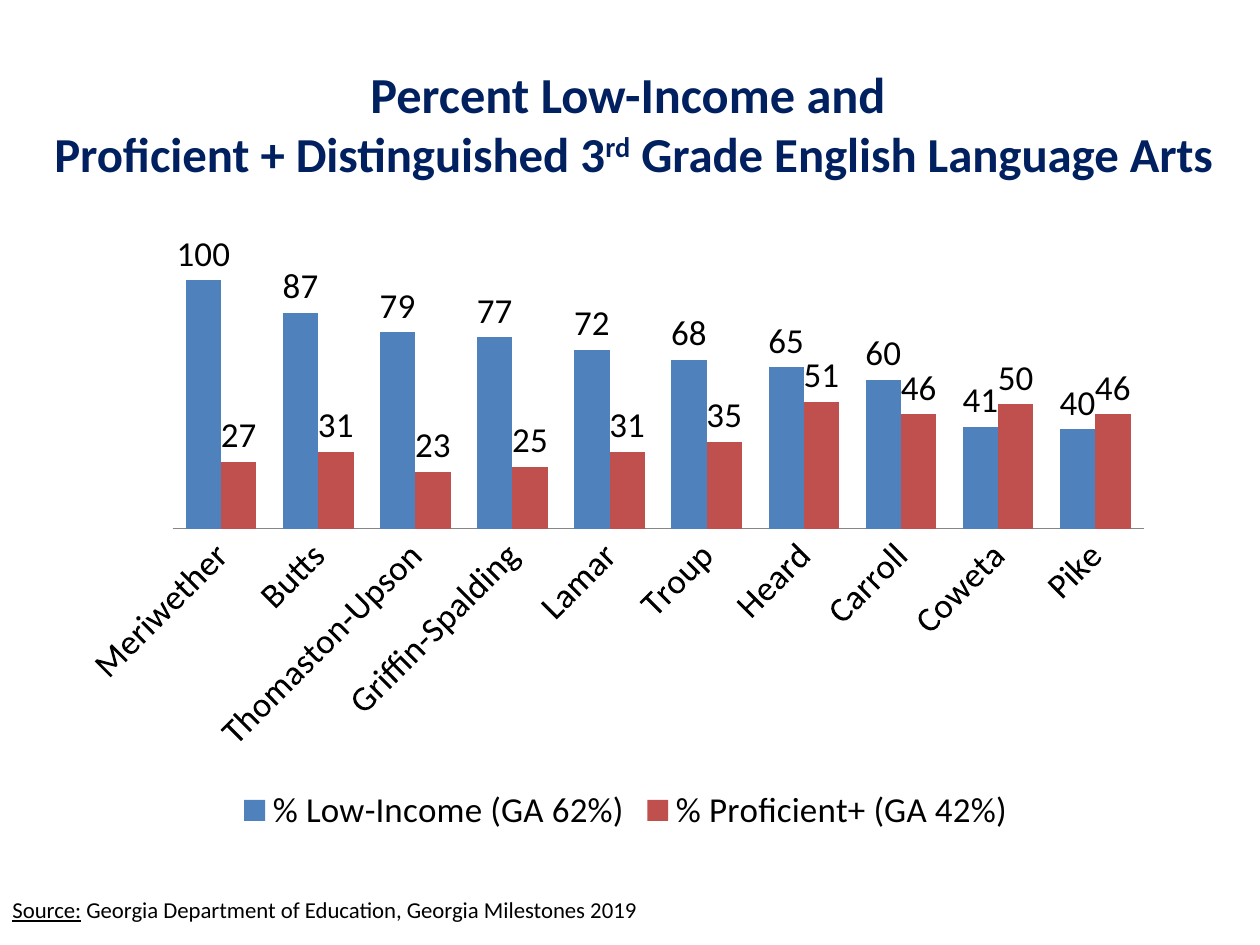
from lxml import etree
from pptx import Presentation
from pptx.chart.data import CategoryChartData
from pptx.dml.color import RGBColor
from pptx.enum.chart import XL_CHART_TYPE, XL_LABEL_POSITION, XL_LEGEND_POSITION, XL_TICK_MARK
from pptx.enum.text import MSO_ANCHOR, MSO_AUTO_SIZE, PP_ALIGN
from pptx.oxml.ns import qn
from pptx.util import Inches, Pt

CLUSTERED = XL_CHART_TYPE.COLUMN_CLUSTERED
OUTSIDE_END = XL_LABEL_POSITION.OUTSIDE_END
BOTTOM = XL_LEGEND_POSITION.BOTTOM
NO_TICK = XL_TICK_MARK.NONE
MIDDLE = MSO_ANCHOR.MIDDLE
CENTER = PP_ALIGN.CENTER
GROW = MSO_AUTO_SIZE.SHAPE_TO_FIT_TEXT

NAVY = RGBColor(0x00, 0x20, 0x60)
BLACK = RGBColor(0x00, 0x00, 0x00)
BLUE = RGBColor(0x4F, 0x81, 0xBD)
RED = RGBColor(0xC0, 0x50, 0x4D)
GRAY = RGBColor(0x86, 0x86, 0x86)
FONT = "Calibri"

COUNTIES = {
    "Meriwether": (100, 27),
    "Butts": (87, 31),
    "Thomaston-Upson": (79, 23),
    "Griffin-Spalding": (77, 25),
    "Lamar": (72, 31),
    "Troup": (68, 35),
    "Heard": (65, 51),
    "Carroll": (60, 46),
    "Coweta": (41, 50),
    "Pike": (40, 46),
}
MEASURES = (("% Low-Income (GA 62%)", BLUE), ("% Proficient+ (GA 42%)", RED))
PLOT_AREA = {"x": 0.08, "y": 0, "w": 0.9, "h": 0.49}


def style(font, size, color, bold=False):
    font.name = FONT
    font.size = Pt(size)
    font.color.rgb = color
    font.bold = bold


def place(shape, left, top, width, height):
    shape.left, shape.top = Inches(left), Inches(top)
    shape.width, shape.height = Inches(width), Inches(height)


prs = Presentation()
prs.slide_width, prs.slide_height = Inches(10), Inches(7.5)
slide = prs.slides.add_slide(prs.slide_layouts[5])

heading = slide.shapes.title
place(heading, 0.25, 0.25, 9.56, 1.45)
heading.text_frame.text = "Percent Low-Income and \vProficient + Distinguished 3"
heading.text_frame.vertical_anchor = MIDDLE
heading.text_frame.word_wrap = True
heading_line = heading.text_frame.paragraphs[0]
heading_line.alignment = CENTER
ordinal = heading_line.add_run()
ordinal.text = "rd"
heading_line.add_run().text = " Grade English Language Arts"
for run, size in zip(heading_line.runs, (28.8, 27.9, 27.9, 27.9)):
    style(run.font, size, NAVY, True)
ordinal._r.get_or_add_rPr().set("baseline", "30000")

citation = slide.shapes.add_textbox(0, Inches(7.14), Inches(8.75), Inches(0.25))
citation.text_frame.word_wrap = True
citation.text_frame.auto_size = GROW
citation_line = citation.text_frame.paragraphs[0]
citation_line.line_spacing = 0.6
for wording in ("Source:", " Georgia Department of Education, Georgia Milestones 2019"):
    run = citation_line.add_run()
    run.text = wording
    style(run.font, 13, BLACK)
citation_line.runs[0].font.underline = True

county_data = CategoryChartData(number_format="0")
county_data.categories = list(COUNTIES)
for (measure, _), percents in zip(MEASURES, zip(*COUNTIES.values())):
    county_data.add_series(measure, percents)
chart = slide.shapes.add_chart(
    CLUSTERED, Inches(0.67), Inches(1.83), Inches(8.58), Inches(4.83), county_data
).chart
style(chart.font, 20, BLACK)
chart.has_title = False
chart.has_legend = True
chart.legend.position = BOTTOM
chart.legend.include_in_layout = False

county_axis = chart.category_axis
county_axis.major_tick_mark = NO_TICK
county_axis.format.line.color.rgb = GRAY
county_axis.tick_labels.font.size = Pt(20)
county_axis._element.find(qn("c:txPr")).find(qn("a:bodyPr")).set("rot", "-2700000")

percent_axis = chart.value_axis
percent_axis.visible = False
percent_axis.has_major_gridlines = False
percent_axis.minimum_scale, percent_axis.maximum_scale = 0, 120

bars = chart.plots[0]
bars.gap_width = 75
bars.overlap = 0
bars.vary_by_categories = False
for series, (_, color) in zip(bars.series, MEASURES):
    series.format.fill.solid()
    series.format.fill.fore_color.rgb = color
    series.invert_if_negative = False
    labels = series.data_labels
    labels.show_value = True
    labels.number_format = "0"
    labels.number_format_is_linked = False
    labels.position = OUTSIDE_END
    style(labels.font, 20, BLACK)

plot_area = chart._chartSpace.chart.plotArea
layout = plot_area.find(qn("c:layout"))
if layout is None:
    layout = etree.Element(qn("c:layout"))
    plot_area.insert(0, layout)
manual = etree.SubElement(layout, qn("c:manualLayout"))
etree.SubElement(manual, qn("c:layoutTarget")).set("val", "inner")
for side in "xy":
    etree.SubElement(manual, qn(f"c:{side}Mode")).set("val", "edge")
for side, share in PLOT_AREA.items():
    etree.SubElement(manual, qn(f"c:{side}")).set("val", str(share))

prs.save("out.pptx")
